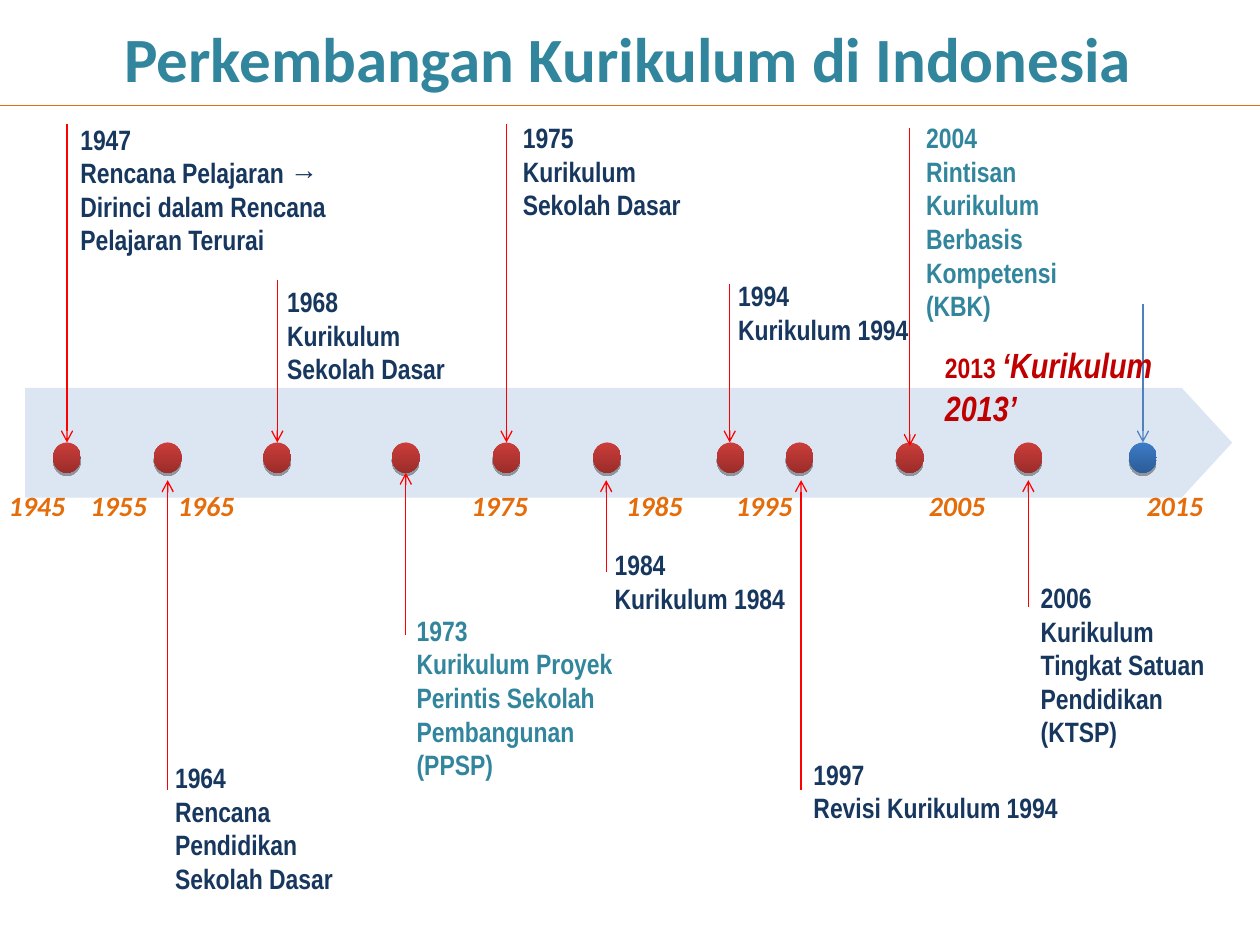
from lxml.etree import SubElement
from pptx import Presentation
from pptx.dml.color import RGBColor as RGB
from pptx.enum.shapes import MSO_CONNECTOR as LINK, MSO_SHAPE as SHAPE
from pptx.enum.text import MSO_ANCHOR as ANCHOR, MSO_AUTO_SIZE as FIT, PP_ALIGN as ALIGN
from pptx.oxml.ns import qn
from pptx.util import Cm, Pt

# Content (positions in cm)
TITLE = "Perkembangan Kurikulum di Indonesia"
COLOURS = {
    "teal": "31859C", "navy": "17375E", "orange": "E46C0A", "crimson": "C00000",
    "band": "DCE6F2", "red": "FF0000", "blue": "4F81BD", "shadow": "000000",
    "red top": "CB3D3A", "red base": "9B2D2A",
    "blue top": "3C7BC7", "blue base": "2C5D98",
}
NARROW, SANS = "Arial Narrow", "Calibri"

# Year, description paragraphs, text colour, note box (left, top, width, height)
NOTES = [
    ("1947", ["Rencana Pelajaran → Dirinci dalam Rencana Pelajaran Terurai"],
     "navy", (1.37, 2.34, 5.54, 3)),
    ("1964", ["Rencana Pendidikan Sekolah Dasar"], "navy", (3.28, 15.21, 4.67, 3)),
    ("1968", ["Kurikulum Sekolah Dasar"], "navy", (5.54, 5.61, 4.67, 2.31)),
    ("1973", ["Kurikulum Proyek Perintis Sekolah Pembangunan (PPSP)"],
     "teal", (8.15, 12.24, 4.55, 3.68)),
    ("1975", ["Kurikulum Sekolah Dasar"], "navy", (10.29, 2.31, 4.11, 2.31)),
    ("1984", ["Kurikulum 1984"], "navy", (12.14, 10.92, 4.04, 1.63)),
    ("1994", ["Kurikulum 1994"], "navy", (14.63, 5.49, 4.34, 1.63)),
    ("1997", ["Revisi Kurikulum 1994"], "navy", (16.15, 15.14, 5.77, 1.63)),
    ("2004", ["Rintisan", "Kurikulum Berbasis Kompetensi (KBK)"],
     "teal", (18.42, 2.31, 4.47, 4.37)),
    ("2006", ["Kurikulum Tingkat Satuan Pendidikan (KTSP)"],
     "navy", (20.73, 11.58, 4.11, 3.76)),
]
LATEST = ("2013 ", "‘Kurikulum 2013’", (18.8, 6.81, 5.16, 2.64))

# Bead centre, arrow x, arrow tip y, arrow far end y
ABOVE, BELOW = 8.92, 9.68
MARKERS = [
    (1.35, 1.35, ABOVE, 2.51), (3.38, 3.38, BELOW, 15.93),
    (5.59, 5.59, ABOVE, 5.64), (8.18, 8.18, 9.53, 12.8),
    (10.21, 10.21, ABOVE, 2.51), (12.24, 12.22, BELOW, 11.53),
    (14.73, 14.71, ABOVE, 5.72), (16.12, 16.15, BELOW, 15.93),
    (18.34, 18.34, 8.99, 2.59), (20.73, 20.73, BELOW, 12.24),
    (23.04, 23.04, ABOVE, 6.12),
]
BEAD_W, BEAD_H = 0.56, 0.61

# Left edges of the scale labels, one per decade from 1945
SCALE_START = 1945
SCALE_LEFTS = [-0.41, 1.24, 3, 8.92, 12.04, 14.25, 18.14, 22.53]


def colour(name):
    return RGB.from_string(COLOURS[name])


def add_run(paragraph, text, size, font, tint, italic=False):
    run = paragraph.add_run()
    run.text = text
    run.font.size, run.font.name = Pt(size), font
    run.font.bold, run.font.italic = True, italic
    run.font.color.rgb = colour(tint)


def add_box(slide, box):
    frame = slide.shapes.add_textbox(*map(Cm, box)).text_frame
    frame.word_wrap = True
    frame.auto_size = FIT.SHAPE_TO_FIT_TEXT
    return frame


def add_line(slide, start, end, tint, arrow=True):
    line = slide.shapes.add_connector(LINK.STRAIGHT, *map(Cm, start + end))
    line.line.color.rgb = colour(tint)
    line.line.width = Pt(0.75)
    if arrow:
        SubElement(line.line._get_or_add_ln(), qn("a:headEnd"), type="arrow")
    SubElement(line._element.spPr, qn("a:effectLst"))


def add_bead(slide, centre, tint):
    bead = slide.shapes.add_shape(
        SHAPE.OVAL, Cm(centre - BEAD_W / 2), Cm(ABOVE), Cm(BEAD_W), Cm(BEAD_H))
    bead.line.fill.background()
    bead.fill.gradient()
    bead.fill.gradient_angle = 270
    for stop, position, end in zip(bead.fill.gradient_stops, (0, 1), ("top", "base")):
        stop.position = position
        stop.color.rgb = colour(f"{tint} {end}")
    # Soft drop shadow straight below
    bead.shadow.inherit = False
    effects = bead._element.spPr.find(qn("a:effectLst"))
    shadow = SubElement(effects, qn("a:outerShdw"), blurRad="0",
                        dist=str(Pt(1.8)), dir="5400000", rotWithShape="0")
    shade = SubElement(shadow, qn("a:srgbClr"), val=COLOURS["shadow"])
    SubElement(shade, qn("a:alpha"), val="35000")


def main():
    deck = Presentation()
    deck.slide_width, deck.slide_height = Cm(25.4), Cm(19.05)
    slide = deck.slides.add_slide(deck.slide_layouts[5])

    # Title and rule
    title = slide.shapes.title
    title.left, title.top, title.width, title.height = map(Cm, (0, 0.18, 25.32, 1.96))
    heading = title.text_frame
    heading.vertical_anchor, heading.auto_size = ANCHOR.MIDDLE, FIT.NONE
    heading.paragraphs[0].alignment = ALIGN.CENTER
    add_run(heading.paragraphs[0], TITLE, 36, SANS, "teal")
    add_line(slide, (0, 2.13), (25.4, 2.13), "orange", arrow=False)

    # Timeline band
    band = slide.shapes.add_shape(SHAPE.PENTAGON, *map(Cm, (0.51, 7.82, 24.33, 2.21)))
    band.adjustments[0] = 0.46
    band.fill.solid()
    band.fill.fore_color.rgb = colour("band")
    band.line.fill.background()
    band.shadow.inherit = False

    # Beads and arrows, the latest one in blue
    for marker in MARKERS:
        centre, x, tip, far = marker
        tint = "blue" if marker is MARKERS[-1] else "red"
        add_bead(slide, centre, tint)
        add_line(slide, (x, tip), (x, far), tint)

    # Curriculum notes
    for year, description, tint, box in NOTES:
        note = add_box(slide, box)
        add_run(note.paragraphs[0], year, 16, NARROW, tint)
        for text in description:
            add_run(note.add_paragraph(), text, 16, NARROW, tint)

    year, name, box = LATEST
    latest = add_box(slide, box).paragraphs[0]
    add_run(latest, year, 16, NARROW, "crimson")
    add_run(latest, name, 20, NARROW, "crimson", italic=True)

    # Decade scale
    for decade, left in enumerate(SCALE_LEFTS):
        label = add_box(slide, (left, 9.73, 2.31, 0.94)).paragraphs[0]
        label.alignment = ALIGN.CENTER
        label.space_before = Pt(10)
        add_run(label, str(SCALE_START + 10 * decade), 16, SANS, "orange", italic=True)

    deck.save("out.pptx")


if __name__ == "__main__":
    main()
